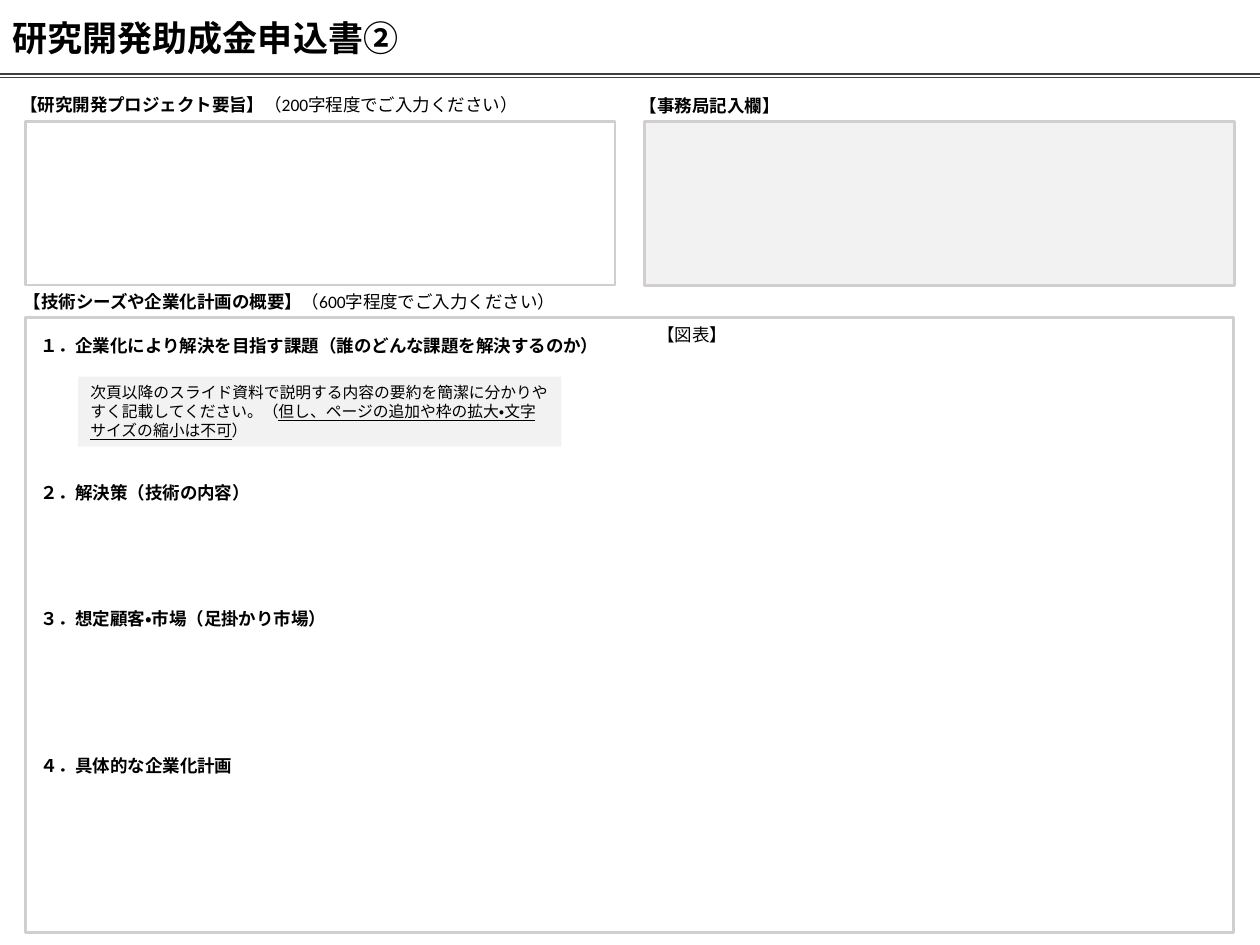
"""Builds the second page of a research grant application form."""
from lxml import etree
from pptx import Presentation
from pptx.dml.color import RGBColor
from pptx.enum import lang, shapes, text
from pptx.oxml import ns
from pptx.util import Pt

BLACK, DARK, BORDER, PALE = "000000", "404040", "D0CECE", "F2F2F2"


def colour(value):
    return RGBColor.from_string(value)


class FormSlide:
    font = {"name": "Calibri", "language_id": lang.MSO_LANGUAGE_ID.JAPANESE}
    frame = {
        "word_wrap": True,
        "auto_size": text.MSO_AUTO_SIZE.NONE,
        "vertical_anchor": text.MSO_ANCHOR.TOP,
    }

    def __init__(self, slide):
        self.slide = slide

    def place(self, shape, bounds):
        for name, value in zip(("left", "top", "width", "height"), bounds):
            setattr(shape, name, Pt(value))
        return shape

    def set_text(self, shape, paragraphs, size, gaps=None, **frame):
        for name, value in {**self.frame, **frame}.items():
            setattr(shape.text_frame, name, value)
        for index, runs in enumerate(paragraphs):
            if index:
                paragraph = shape.text_frame.add_paragraph()
            else:
                paragraph = shape.text_frame.paragraphs[0]
            paragraph.alignment = text.PP_ALIGN.LEFT
            paragraph.space_before = Pt(gaps[index] if gaps else 0)
            for words, style in runs:
                run = paragraph.add_run()
                run.text = words
                for name, value in {**self.font, "size": Pt(size), **style}.items():
                    setattr(run.font, name, value)
                run.font.color.rgb = colour(BLACK)

    def title(self, bounds, words):
        shape = self.place(self.slide.shapes.title, bounds)
        self.set_text(shape, [[(words, {"bold": True})]], 20)

    def headings(self, bounds, items, gaps):
        shape = self.place(self.slide.placeholders[1], bounds)
        self.set_text(shape, [[(item, {"bold": True})] for item in items], 10, gaps)
        for paragraph in shape.text_frame.paragraphs:
            properties = paragraph._p.get_or_add_pPr()
            properties.set("marL", "0")
            properties.set("indent", "0")
            etree.SubElement(properties, ns.qn("a:buNone"))

    def label(self, bounds, *runs):
        shape = self.slide.shapes.add_textbox(*map(Pt, bounds))
        self.set_text(shape, [runs], 10)

    def box(self, bounds, fill=None, line=None):
        shape = self.slide.shapes.add_shape(
            shapes.MSO_SHAPE.RECTANGLE, *map(Pt, bounds))
        shape.shadow.inherit = False
        if fill:
            shape.fill.solid()
            shape.fill.fore_color.rgb = colour(fill)
        else:
            shape.fill.background()
        if line:
            shape.line.color.rgb = colour(line)
            shape.line.width = Pt(1.5)
        else:
            shape.line.fill.background()
        return shape

    def note(self, bounds, *runs):
        self.set_text(self.box(bounds, PALE), [runs], 9,
                      vertical_anchor=text.MSO_ANCHOR.MIDDLE)

    def rule(self, top, width):
        line = self.slide.shapes.add_connector(
            shapes.MSO_CONNECTOR.STRAIGHT, Pt(0), Pt(top), Pt(720), Pt(top))
        line.line.color.rgb = colour(DARK)
        line.line.width = Pt(width)
        etree.SubElement(line._element.spPr, ns.qn("a:effectLst"))


def main():
    presentation = Presentation()
    presentation.slide_width, presentation.slide_height = Pt(720), Pt(540)
    form = FormSlide(presentation.slides.add_slide(presentation.slide_layouts[1]))
    bold, plain = {"bold": True}, {"bold": False}

    form.title((0, 5.8, 304, 31.5), "研究開発助成金申込書②")
    for top, width in ((44.5, 0.5), (42.3, 1.5)):
        form.rule(top, width)

    form.box((14.4, 181.5, 690.5, 351.4), line=BORDER)
    form.box((14.4, 69.4, 337, 93.6), line=BORDER)
    form.box((368.4, 69.5, 337, 93.6), PALE, BORDER)

    form.label((4.5, 50.4, 325, 20), ("【研究開発プロジェクト要旨】", bold),
               ("（200字程度でご入力ください）", plain))
    form.label((6.5, 162.7, 325, 20), ("【技術シーズや企業化計画の概要】", bold),
               ("（600字程度でご入力ください）", plain))
    form.label((358.6, 51, 325, 20), ("【事務局記入欄】", bold))
    form.label((368.6, 181.5, 60, 20), ("【図表】", plain))

    form.headings(
        (16, 188, 345.6, 338.4),
        ("１．企業化により解決を目指す課題（誰のどんな課題を解決するのか）",
         "２．解決策（技術の内容）",
         "３．想定顧客・市場（足掛かり市場）",
         "４．具体的な企業化計画"),
        (0, 72, 60, 72))
    form.note(
        (44.6, 215.2, 276.3, 40),
        ("次頁以降のスライド資料で説明する内容の要約を簡潔に分かりやすく記載してください。（", plain),
        ("但し、ページの追加や枠の拡大・文字サイズの縮小は不可", {"underline": True}),
        ("）", plain))
    presentation.save("out.pptx")


if __name__ == "__main__":
    main()
